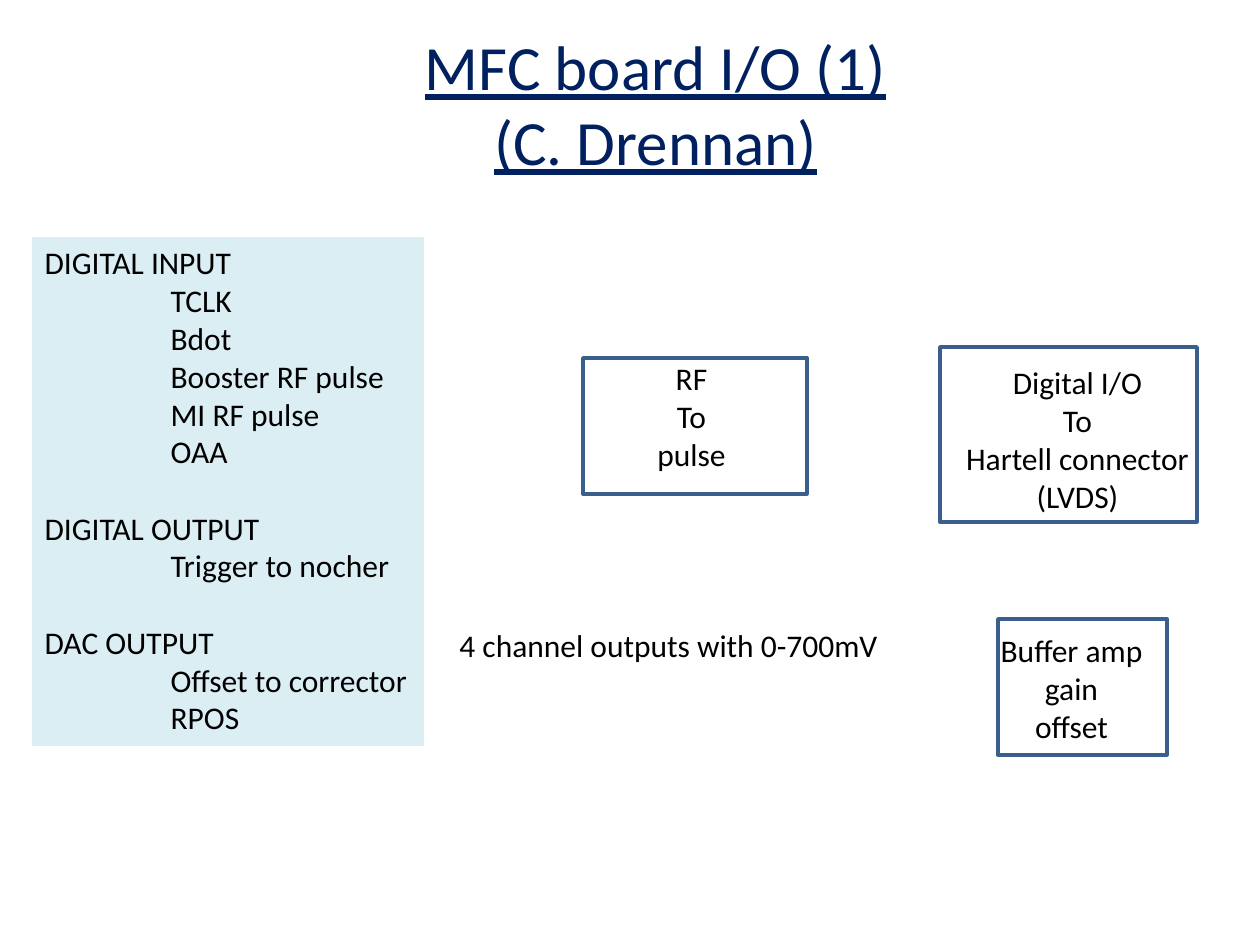
from pptx import Presentation
from pptx.dml.color import RGBColor
from pptx.enum.shapes import MSO_SHAPE
from pptx.enum.text import MSO_ANCHOR, MSO_AUTO_SIZE, PP_ALIGN
from pptx.oxml.ns import qn
from pptx.util import Emu, Pt
from lxml import etree

SCALE = 914400 / 126  # EMU per px


def px(n):
    return Emu(round(n * SCALE))


def color(code):
    return RGBColor.from_string(code)


def write(par, text, size=18, ink="000000", font="Calibri", line=False,
          align=PP_ALIGN.LEFT, gap=0):
    run = par.add_run()
    run.text = text
    run.font.name, run.font.size = font, Pt(size)
    run.font.color.rgb = color(ink)
    run.font.underline = line
    par.alignment = align
    par.space_before = Pt(gap)


class Deck:
    navy, edge, tint = "002060", "3A5F8C", "DBEEF4"
    tab = 126  # indent of list items
    gap = 22   # one text line, in points

    def __init__(self):
        self.prs = Presentation()
        self.prs.slide_width, self.prs.slide_height = px(1260), px(945)
        self.slide = self.prs.slides.add_slide(self.prs.slide_layouts[1])

    def place(self, shape, box, wrap=False):
        shape.left, shape.top, shape.width, shape.height = map(px, box)
        frame = shape.text_frame
        frame.word_wrap = wrap
        frame.auto_size = MSO_AUTO_SIZE.NONE
        frame.vertical_anchor = MSO_ANCHOR.TOP
        return frame

    def fill(self, frame, lines, **style):
        for i, text in enumerate(lines):
            par = frame.add_paragraph() if i else frame.paragraphs[0]
            write(par, text, **style)

    def title(self, box, lines):
        frame = self.place(self.slide.shapes.title, box)
        self.fill(frame, lines, size=36, ink=self.navy, line=True,
                  align=PP_ALIGN.CENTER)

    def panel(self, box, groups):
        body = self.slide.placeholders[1]
        body.fill.solid()
        body.fill.fore_color.rgb = color(self.tint)
        frame = self.place(body, box)
        rows = [(text, i) for head, items in groups.items()
                for i, text in enumerate([head, *items])]
        for n, (text, rank) in enumerate(rows):
            par = frame.add_paragraph() if n else frame.paragraphs[0]
            write(par, text, gap=self.gap if n and not rank else 0)
            props = par._p.get_or_add_pPr()
            props.set("marL", str(px(self.tab) if rank else 0))
            props.set("indent", "0")
            etree.SubElement(props, qn("a:buNone"))

    def frame(self, box):
        rect = self.slide.shapes.add_shape(MSO_SHAPE.RECTANGLE, *map(px, box))
        rect.shadow.inherit = False
        rect.fill.background()
        rect.line.color.rgb = color(self.edge)
        rect.line.width = Pt(2)

    def label(self, box, lines, wrap=False, align=PP_ALIGN.CENTER):
        text = self.slide.shapes.add_textbox(*map(px, box))
        self.fill(self.place(text, box, wrap), lines, align=align)


def main():
    deck = Deck()
    deck.title((410, 21, 491, 165), ["MFC board I/O (1)", "(C. Drennan)"])

    # Signal list
    deck.panel((32, 237, 392, 509), {
        "DIGITAL INPUT": ["TCLK", "Bdot", "Booster RF pulse", "MI RF pulse",
                          "OAA"],
        "DIGITAL OUTPUT": ["Trigger to nocher"],
        "DAC OUTPUT": ["Offset to corrector", "RPOS"],
    })

    # Note on the DAC channels
    deck.label((447, 620, 449, 50), ["4 channel outputs with 0-700mV"],
               align=PP_ALIGN.LEFT)

    # Outlined blocks, each with its label
    blocks = [
        ((998, 619, 169, 136), (987, 625, 169, 127), False,
         ["Buffer amp", "gain", "offset"]),
        ((940, 347, 257, 175), (939, 357, 277, 165), True,
         ["Digital I/O", "To", "Hartell connector", "(LVDS)"]),
        ((583, 358, 224, 136), (553, 353, 277, 127), True,
         ["RF", "To", "pulse"]),
    ]
    for edge, area, wrap, lines in blocks:
        deck.frame(edge)
        deck.label(area, lines, wrap)

    deck.prs.save("out.pptx")


if __name__ == "__main__":
    main()
